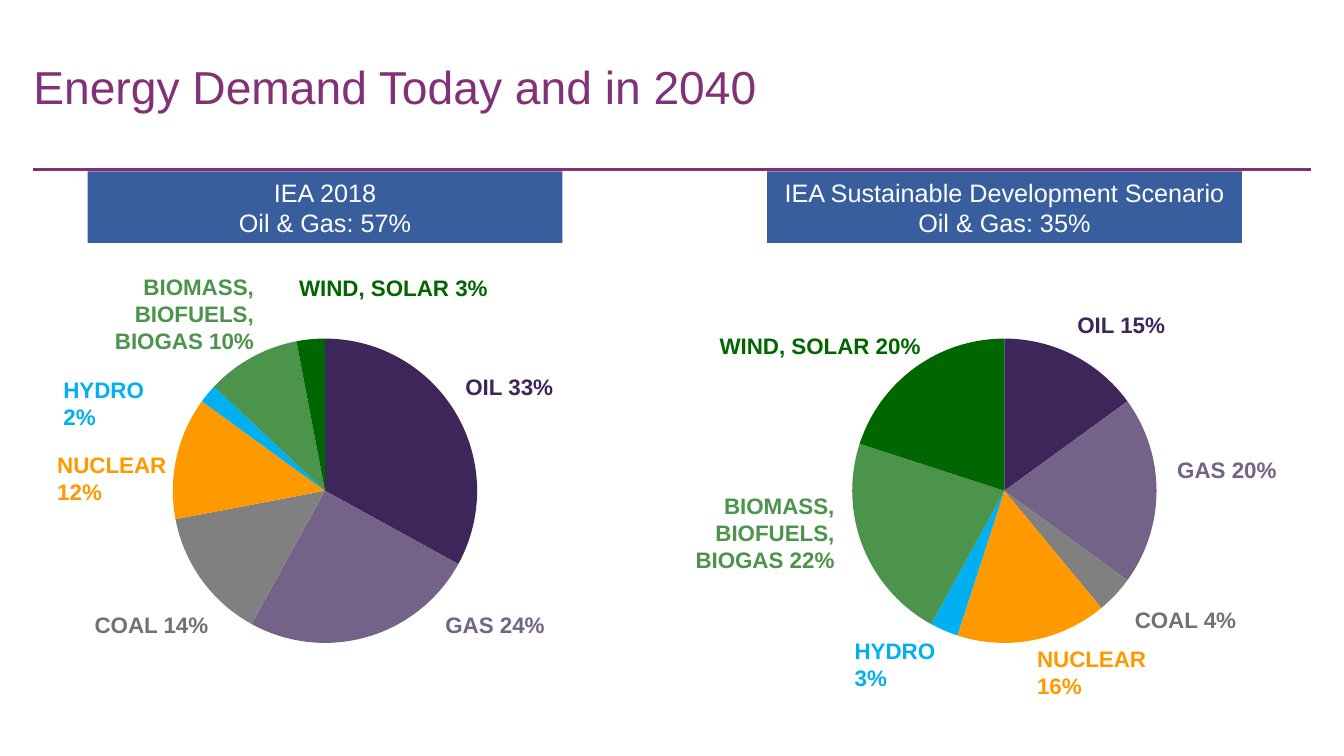
from lxml import etree
from pptx import Presentation
from pptx.chart.data import CategoryChartData
from pptx.dml.color import RGBColor
from pptx.enum import chart as ch, shapes, text
from pptx.oxml import parse_xml
from pptx.oxml.ns import nsdecls, qn
from pptx.util import Pt

PLUM = RGBColor(0x83, 0x31, 0x77)
BLUE = RGBColor(0x38, 0x5E, 0x9D)
WHITE = RGBColor(0xFF, 0xFF, 0xFF)
BLACK = RGBColor(0, 0, 0)
OIL = RGBColor(0x3E, 0x25, 0x5A)
GAS = RGBColor(0x74, 0x62, 0x88)
COAL = RGBColor(0x80, 0x80, 0x80)
COAL_TEXT = RGBColor(0x76, 0x71, 0x71)
NUCLEAR = RGBColor(0xFF, 0x99, 0x00)
HYDRO = RGBColor(0x00, 0xB0, 0xF0)
BIO = RGBColor(0x4C, 0x94, 0x4C)
WIND = RGBColor(0x00, 0x66, 0x00)
FONT = "Arial"

# Content
TITLE = "Energy Demand Today and in 2040"
# name, slice colour, label colour, label width, label lines
FUELS = [
    ("OIL", OIL, OIL, 92, 1),
    ("GAS", GAS, GAS, 120, 1),
    ("COAL", COAL, COAL_TEXT, 108, 1),
    ("NUCLEAR", NUCLEAR, NUCLEAR, 96.5, 2),
    ("HYDRO", HYDRO, HYDRO, 96.5, 2),
    ("BIOMASS, BIOFUELS, BIOGAS", BIO, BIO, 128, 3),
    ("WIND, SOLAR", WIND, WIND, 169, 1),
]
# left edge, heading, slice values, then (shown percent, left, top) per label
PANELS = [
    (62.6, ["IEA 2018", "Oil & Gas: 57%"],
     [33, 25, 14, 13, 2, 10, 3],
     [(33, 325.4, 262.8), (24, 311, 432.7), (14, 60.5, 432.7), (12, 33.8, 319),
      (2, 38.2, 265), (10, 60.5, 191.5), (3, 206.6, 192.2)]),
    (547.9, ["IEA Sustainable Development Scenario", "Oil & Gas: 35%"],
     [15, 20, 4, 16, 3, 22, 20],
     [(15, 762.5, 218.9), (20, 833.8, 322.6), (4, 803.5, 429.1), (16, 733.7, 457.2),
      (3, 603.4, 451.4), (22, 475.2, 347.8), (20, 506.9, 234)]),
]
HEAD_W, HEAD_H, HEAD_TOP = 339.1, 51.1, 122.4
CHART_W, CHART_H, CHART_TOP, PIE = 268.6, 237.6, 231.8, 217.4
LINE_H = 19.4


def style(p, size, color, bold=False, align=None):
    p.font.name, p.font.size, p.font.bold = FONT, Pt(size), bold
    p.font.color.rgb = color
    p.alignment = align


def add_pie(slide, left, values):
    data = CategoryChartData()
    data.categories = [str(i + 1) for i in range(len(values))]
    data.add_series("Series 1", values)
    chart = slide.shapes.add_chart(ch.XL_CHART_TYPE.PIE, Pt(left), Pt(CHART_TOP),
                                   Pt(CHART_W), Pt(CHART_H), data).chart
    chart.has_legend = chart.has_title = False
    chart.font.name, chart.font.size = FONT, Pt(10)
    chart.font.color.rgb = BLACK
    plot = chart.plots[0]
    plot.vary_by_categories = True
    for i, fuel in enumerate(FUELS):
        fmt = plot.series[0].points[i].format
        fmt.fill.solid()
        fmt.fill.fore_color.rgb = fuel[1]
        fmt.line.fill.background()

    # Centre the pie at a fixed diameter
    w, h = PIE / CHART_W, PIE / CHART_H
    area = chart.element.find(".//" + qn("c:plotArea"))
    for old in area.findall(qn("c:layout")):
        area.remove(old)
    layout = parse_xml(f"<c:layout {nsdecls('c')}><c:manualLayout/></c:layout>")
    settings = [("layoutTarget", "inner"), ("xMode", "edge"), ("yMode", "edge"),
                ("x", (1 - w) / 2), ("y", (1 - h) / 2), ("w", w), ("h", h)]
    for tag, val in settings:
        val = val if isinstance(val, str) else f"{val:.4f}"
        etree.SubElement(layout[0], qn("c:" + tag)).set("val", val)
    area.insert(0, layout)


def add_label(slide, fuel, percent, left, top):
    name, _, color, width, lines = fuel
    tf = slide.shapes.add_textbox(Pt(left), Pt(top), Pt(width),
                                  Pt(lines * LINE_H + 7.2)).text_frame
    tf.word_wrap = True
    p = tf.paragraphs[0]
    p.text = f"{name} {percent}%"
    align = text.PP_ALIGN.RIGHT if lines == 3 else text.PP_ALIGN.LEFT
    style(p, 16, color, True, align)


def add_heading(slide, left, lines):
    sp = slide.shapes.add_shape(shapes.MSO_SHAPE.RECTANGLE, Pt(left), Pt(HEAD_TOP),
                                Pt(HEAD_W), Pt(HEAD_H))
    sp.shadow.inherit = False
    sp.fill.solid()
    sp.fill.fore_color.rgb = BLUE
    sp.line.fill.background()
    tf = sp.text_frame
    tf.word_wrap = True
    tf.text = "\n".join(lines)
    for p in tf.paragraphs:
        style(p, 18, WHITE, align=text.PP_ALIGN.CENTER)


def main():
    prs = Presentation()
    prs.slide_width, prs.slide_height = Pt(960), Pt(540)
    s = prs.slides.add_slide(prs.slide_layouts[5])

    # Title and rule
    title = s.shapes.title
    title.left, title.top, title.width, title.height = Pt(23.8), Pt(42.5), Pt(913), Pt(71.3)
    tf = title.text_frame
    tf.text = TITLE
    tf.word_wrap = True
    tf.auto_size = text.MSO_AUTO_SIZE.NONE
    tf.margin_left = 0
    tf.vertical_anchor = text.MSO_ANCHOR.TOP
    style(tf.paragraphs[0], 33, PLUM, align=text.PP_ALIGN.LEFT)
    tf.paragraphs[0].line_spacing = 0.9

    rule = s.shapes.add_connector(shapes.MSO_CONNECTOR.STRAIGHT,
                                  Pt(23.8), Pt(121), Pt(936.7), Pt(121))
    rule.line.color.rgb = PLUM
    rule.line.width = Pt(2)
    etree.SubElement(rule.element.spPr, qn("a:effectLst"))

    # One panel per scenario
    for left, heading, values, labels in PANELS:
        add_pie(s, left + (HEAD_W - CHART_W) / 2, values)
        for fuel, label in zip(FUELS, labels):
            add_label(s, fuel, *label)
        add_heading(s, left, heading)

    prs.save("out.pptx")


if __name__ == "__main__":
    main()
